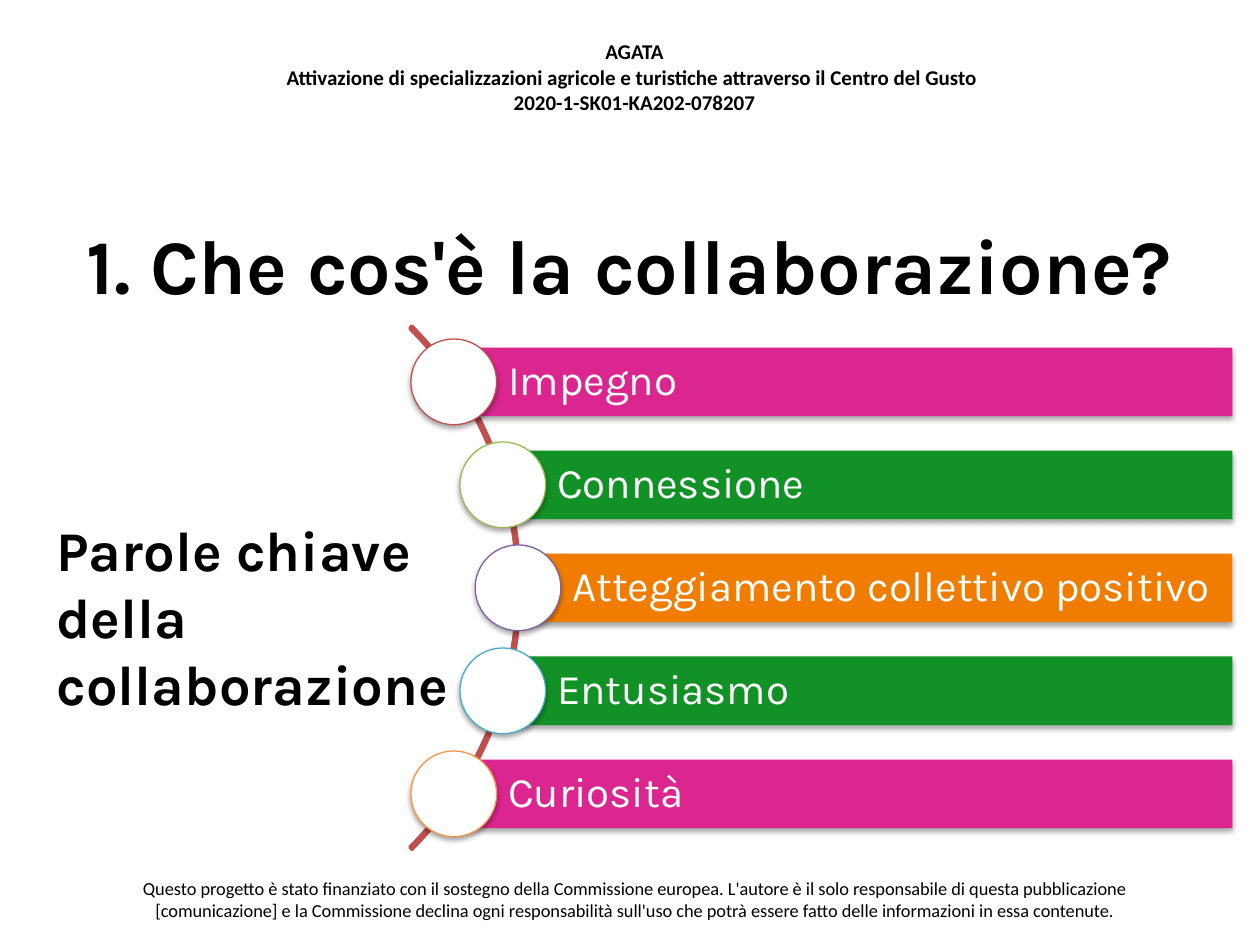
from lxml.etree import SubElement
from pptx import Presentation
from pptx.dml.color import RGBColor
from pptx.enum.shapes import MSO_SHAPE as Preset
from pptx.enum.text import MSO_ANCHOR as Anchor, PP_ALIGN as Align
from pptx.oxml.ns import qn
from pptx.util import Pt

BLACK = RGBColor(0x00, 0x00, 0x00)
WHITE = RGBColor(0xFF, 0xFF, 0xFF)
PINK = RGBColor(0xDB, 0x26, 0x90)
DARK_GREEN = RGBColor(0x12, 0x91, 0x26)
BRIGHT_ORANGE = RGBColor(0xF0, 0x7D, 0x00)
RED = RGBColor(0xC0, 0x50, 0x4D)
LIGHT_GREEN = RGBColor(0x9B, 0xBB, 0x59)
PURPLE = RGBColor(0x80, 0x64, 0xA2)
TEAL = RGBColor(0x4B, 0xAC, 0xC6)
SOFT_ORANGE = RGBColor(0xF7, 0x96, 0x46)

KEYWORDS = [
    ("Impegno", 259.3, PINK, RED),
    ("Connessione", 287.3, DARK_GREEN, LIGHT_GREEN),
    ("Atteggiamento collettivo positivo", 296, BRIGHT_ORANGE, PURPLE),
    ("Entusiasmo", 287.3, DARK_GREEN, TEAL),
    ("Curiosità", 259.3, PINK, SOFT_ORANGE),
]
FIRST_CENTER = 218.2
ROW_PITCH = 58.85
BAR_RIGHT = 704.2
BAR_HEIGHT = 39.2
CIRCLE_SIZE = 49
ARC_SIZE = 422.6


def write_text(shape, *lines, size, font="Calibri", color=BLACK, bold=False,
               align=Align.LEFT, anchor=Anchor.TOP, line_spacing=None):
    frame = shape.text_frame
    frame.word_wrap = True
    frame.vertical_anchor = anchor
    for index, line in enumerate(lines):
        paragraph = frame.add_paragraph() if index else frame.paragraphs[0]
        paragraph.alignment = align
        paragraph.line_spacing = line_spacing
        run = paragraph.add_run()
        run.text = line
        run.font.size = Pt(size)
        run.font.name = font
        run.font.bold = bold
        run.font.color.rgb = color


def add_text(slide, box, *lines, **text_format):
    shape = slide.shapes.add_textbox(*map(Pt, box))
    write_text(shape, *lines, **text_format)


def add_preset(slide, preset, box, fill=None, line=None, line_width=0.75):
    shape = slide.shapes.add_shape(preset, *map(Pt, box))
    shape.shadow.inherit = False
    if fill is None:
        shape.fill.background()
    else:
        shape.fill.solid()
        shape.fill.fore_color.rgb = fill
    if line is None:
        shape.line.fill.background()
    else:
        shape.line.color.rgb = line
        shape.line.width = Pt(line_width)
    return shape


def add_shadow(shape):
    effects = shape._element.spPr.find(qn("a:effectLst"))
    shadow = SubElement(effects, qn("a:outerShdw"), blurRad=str(Pt(3.1)),
                        dist=str(Pt(1.8)), dir="5400000", rotWithShape="0")
    color = SubElement(shadow, qn("a:srgbClr"), val=str(BLACK))
    SubElement(color, qn("a:alpha"), val="35000")


def add_arc(slide):
    middle = FIRST_CENTER + 2 * ROW_PITCH
    box = (-125.3, middle - ARC_SIZE / 2, ARC_SIZE, ARC_SIZE)
    arc = add_preset(slide, Preset.BLOCK_ARC, box, line=RED, line_width=2)
    for index, value in enumerate((189, 27, 0.004)):
        arc.adjustments[index] = value


def add_keyword(slide, row, text, left, bar_color, ring_color):
    center = FIRST_CENTER + row * ROW_PITCH
    bar_box = (left, center - BAR_HEIGHT / 2, BAR_RIGHT - left, BAR_HEIGHT)
    bar = add_preset(slide, Preset.RECTANGLE, bar_box, fill=bar_color)
    add_shadow(bar)
    frame = bar.text_frame
    frame.margin_left = Pt(31)
    frame.margin_right = frame.margin_top = frame.margin_bottom = Pt(5)
    write_text(bar, text, size=24, font="Karla", color=WHITE,
               anchor=Anchor.MIDDLE, line_spacing=0.9)
    radius = CIRCLE_SIZE / 2
    circle_box = (left - radius, center - radius, CIRCLE_SIZE, CIRCLE_SIZE)
    circle = add_preset(slide, Preset.OVAL, circle_box, fill=WHITE, line=ring_color)
    add_shadow(circle)


def main():
    presentation = Presentation()
    presentation.slide_width = Pt(720)
    presentation.slide_height = Pt(540)
    slide = presentation.slides.add_slide(presentation.slide_layouts[6])

    add_text(slide, (149.8, 18.7, 425.5, 51.1),
             "AGATA",
             "Attivazione di specializzazioni agricole e turistiche attraverso il Centro del Gusto ",
             "2020-1-SK01-KA202-078207",
             size=12, bold=True, align=Align.CENTER)
    add_text(slide, (38.9, 497.5, 648, 33.8),
             "Questo progetto è stato finanziato con il sostegno della Commissione europea. "
             "L'autore è il solo responsabile di questa pubblicazione [comunicazione] e la "
             "Commissione declina ogni responsabilità sull'uso che potrà essere fatto delle "
             "informazioni in essa contenute.",
             size=10.5, align=Align.CENTER)
    add_text(slide, (36, 105.8, 648, 90), "1. Che cos'è la collaborazione?",
             size=44, font="Karla", bold=True, align=Align.CENTER, anchor=Anchor.MIDDLE)
    add_text(slide, (25.2, 290.9, 284.4, 90), "Parole chiave della collaborazione",
             size=32, font="Karla", bold=True)

    add_arc(slide)
    for row, keyword in enumerate(KEYWORDS):
        add_keyword(slide, row, *keyword)
    presentation.save("out.pptx")


if __name__ == "__main__":
    main()
